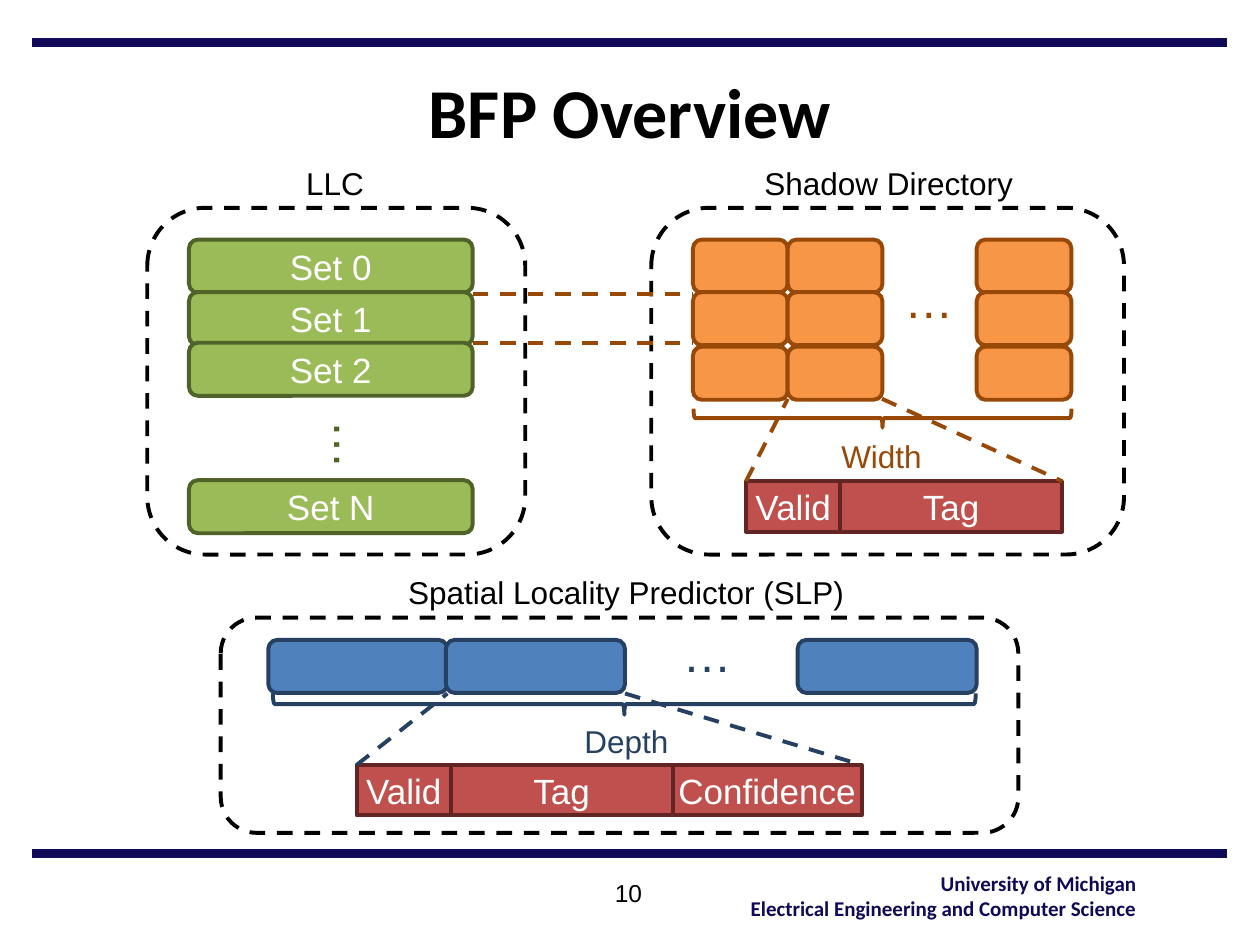
import lxml.etree
import pptx
import pptx.dml.color
import pptx.enum.dml
import pptx.enum.shapes
import pptx.enum.text
import pptx.oxml.ns
import pptx.util

Cm, Pt = pptx.util.Cm, pptx.util.Pt
RGBColor = pptx.dml.color.RGBColor
SHAPE = pptx.enum.shapes.MSO_SHAPE
ALIGN = pptx.enum.text.PP_ALIGN
ANCHOR = pptx.enum.text.MSO_ANCHOR
DASH = pptx.enum.dml.MSO_LINE.DASH

BLACK, WHITE = RGBColor(0, 0, 0), RGBColor(255, 255, 255)
NAVY = RGBColor(0x0F, 0x09, 0x58)
GREEN, DARK_GREEN = RGBColor(0x9B, 0xBB, 0x59), RGBColor(0x4F, 0x62, 0x28)
ORANGE, BROWN = RGBColor(0xF7, 0x96, 0x46), RGBColor(0x98, 0x48, 0x07)
BLUE, DARK_BLUE = RGBColor(0x4F, 0x81, 0xBD), RGBColor(0x25, 0x40, 0x61)
RED, DARK_RED = RGBColor(0xC0, 0x50, 0x4D), RGBColor(0x63, 0x25, 0x23)

# All lengths are in centimetres; boxes are (left, top, width, height).
RULE_LEFT, RULE_RIGHT, RULE_TOPS = 0.64, 24.74, (0.86, 17.2)
CELL_HEIGHT, FIELD_HEIGHT = 1.07, 1.02

TITLE = ("BFP Overview", (1.9, 1.07, 21.59, 2.31))
PAGE_NUMBER = ("10", (10.03, 17.58, 5.28, 1.27))
FOOTER = ("University of Michigan\nElectrical Engineering and Computer Science",
          (14.78, 17.42, 8.38, 1.27))

FRAMES = [(2.97, 4.19, 7.62, 6.99), (13.13, 4.19, 9.53, 6.99),
          (4.45, 12.45, 16.08, 4.34)]
LABELS = [
    ("LLC", (5.92, 3.18, 1.68, 1.02), BLACK),
    ("Shadow Directory", (15.16, 3.18, 5.56, 1.02), BLACK),
    ("Spatial Locality Predictor (SLP)", (7.98, 11.43, 9.37, 1.02), BLACK),
    ("Width", (16.71, 8.69, 2.16, 1.02), BROWN),
    ("Depth", (11.53, 14.43, 2.24, 1.02), DARK_BLUE),
]
ELLIPSES = [
    ((6.15, 8.23, 1.7, 1.24), DARK_GREEN, True),
    ((17.98, 5.31, 1.5, 1.45), BROWN, False),
    ((13.51, 12.45, 1.5, 1.45), DARK_BLUE, False),
]
SET_LEFT, SET_WIDTH = 3.81, 5.72
SETS = [("Set 0", 4.83), ("Set 1", 5.89), ("Set 2", 6.91), ("Set N", 9.68)]
SET_LINK_TOPS = (5.92, 6.91)

CELL_GRIDS = [
    {"lefts": (13.97, 15.88, 19.69), "tops": (4.83, 5.89, 6.99),
     "width": 1.91, "fill": ORANGE, "line": BROWN},
    {"lefts": (5.41, 8.99, 16.08), "tops": (12.9,),
     "width": 3.61, "fill": BLUE, "line": DARK_BLUE},
]
BRACES = [((17.6, 4.62, 0.38, 7.62), BROWN),
          ((12.37, 7.11, 0.43, 14.17), DARK_BLUE)]
ENTRIES = [
    {"left": 15.04, "top": 9.7, "fields": [("Valid", 1.9), ("Tag", 4.47)],
     "cell": (15.88, 17.78, 8.04), "color": BROWN},
    {"left": 7.19, "top": 15.42,
     "fields": [("Valid", 1.9), ("Tag", 4.47), ("Confidence", 3.81)],
     "cell": (9.02, 12.6, 13.98), "color": DARK_BLUE},
]


def write(shape, text, size, color, align=ALIGN.CENTER, font="Arial",
          bold=False, anchor=ANCHOR.TOP, wrap=False):
    frame = shape.text_frame
    frame.text = text
    frame.word_wrap = wrap
    frame.vertical_anchor = anchor
    formats = {"name": font, "size": Pt(size), "bold": bold}
    for paragraph in frame.paragraphs:
        paragraph.alignment = align
        for name, value in formats.items():
            setattr(paragraph.font, name, value)
        paragraph.font.color.rgb = color


def add_text(slide, text, box, size, color, **options):
    shape = slide.shapes.add_textbox(*map(Cm, box))
    write(shape, text, size, color, **options)
    return shape


def add_box(slide, kind, box, fill, line, text="", dashed=False):
    shape = slide.shapes.add_shape(kind, *map(Cm, box))
    shape.shadow.inherit = False
    if fill is None:
        shape.fill.background()
    else:
        shape.fill.solid()
        shape.fill.fore_color.rgb = fill
    shape.line.color.rgb = line
    shape.line.width = Pt(2.25)
    if dashed:
        shape.line.dash_style = DASH
    if text:
        write(shape, text, 20, WHITE, anchor=ANCHOR.MIDDLE)
    return shape


def add_line(slide, start, end, color, width=2.25, dashed=True):
    line = slide.shapes.add_connector(
        pptx.enum.shapes.MSO_CONNECTOR.STRAIGHT, *map(Cm, start + end))
    line.line.color.rgb = color
    line.line.width = Pt(width)
    if dashed:
        line.line.dash_style = DASH
    properties = line.element.find(pptx.oxml.ns.qn("p:spPr"))
    lxml.etree.SubElement(properties, pptx.oxml.ns.qn("a:effectLst"))


def add_entry(slide, entry):
    """Draw an entry's fields and the dashed lines from the cell it details."""
    left, top = entry["left"], entry["top"]
    right = left
    for name, width in entry["fields"]:
        add_box(slide, SHAPE.RECTANGLE, (right, top, width, FIELD_HEIGHT),
                RED, DARK_RED, name)
        right += width
    cell_left, cell_right, cell_bottom = entry["cell"]
    add_line(slide, (left, top), (cell_left, cell_bottom), entry["color"])
    add_line(slide, (cell_right, cell_bottom), (right, top), entry["color"])


def main():
    presentation = pptx.Presentation()
    presentation.slide_width, presentation.slide_height = Cm(25.4), Cm(19.05)
    slide = presentation.slides.add_slide(presentation.slide_layouts[6])

    for top in RULE_TOPS:
        add_line(slide, (RULE_LEFT, top), (RULE_RIGHT, top), NAVY, 5, False)
    add_text(slide, *FOOTER, 12, NAVY, align=ALIGN.RIGHT, font="Calibri", bold=True)
    add_text(slide, *TITLE, 40, BLACK, font="Calibri", bold=True,
             anchor=ANCHOR.MIDDLE, wrap=True)
    add_text(slide, *PAGE_NUMBER, 14, BLACK, wrap=True)

    for box in FRAMES:
        add_box(slide, SHAPE.ROUNDED_RECTANGLE, box, None, BLACK, dashed=True)
    for text, box, color in LABELS:
        add_text(slide, text, box, 18, color, align=ALIGN.LEFT)
    for box, color, vertical in ELLIPSES:
        shape = add_text(slide, "…", box, 28, color, align=ALIGN.LEFT)
        if vertical:
            body = shape.element.find(".//" + pptx.oxml.ns.qn("a:bodyPr"))
            body.set("vert", "eaVert")

    for name, top in SETS:
        add_box(slide, SHAPE.ROUNDED_RECTANGLE,
                (SET_LEFT, top, SET_WIDTH, CELL_HEIGHT), GREEN, DARK_GREEN, name)
    for top in SET_LINK_TOPS:
        add_line(slide, (SET_LEFT + SET_WIDTH, top),
                 (CELL_GRIDS[0]["lefts"][0], top), BROWN)
    for grid in CELL_GRIDS:
        for top in grid["tops"]:
            for left in grid["lefts"]:
                add_box(slide, SHAPE.ROUNDED_RECTANGLE,
                        (left, top, grid["width"], CELL_HEIGHT),
                        grid["fill"], grid["line"])
    for box, color in BRACES:
        add_box(slide, SHAPE.RIGHT_BRACE, box, None, color).rotation = 90
    for entry in ENTRIES:
        add_entry(slide, entry)

    presentation.save("out.pptx")


if __name__ == "__main__":
    main()
